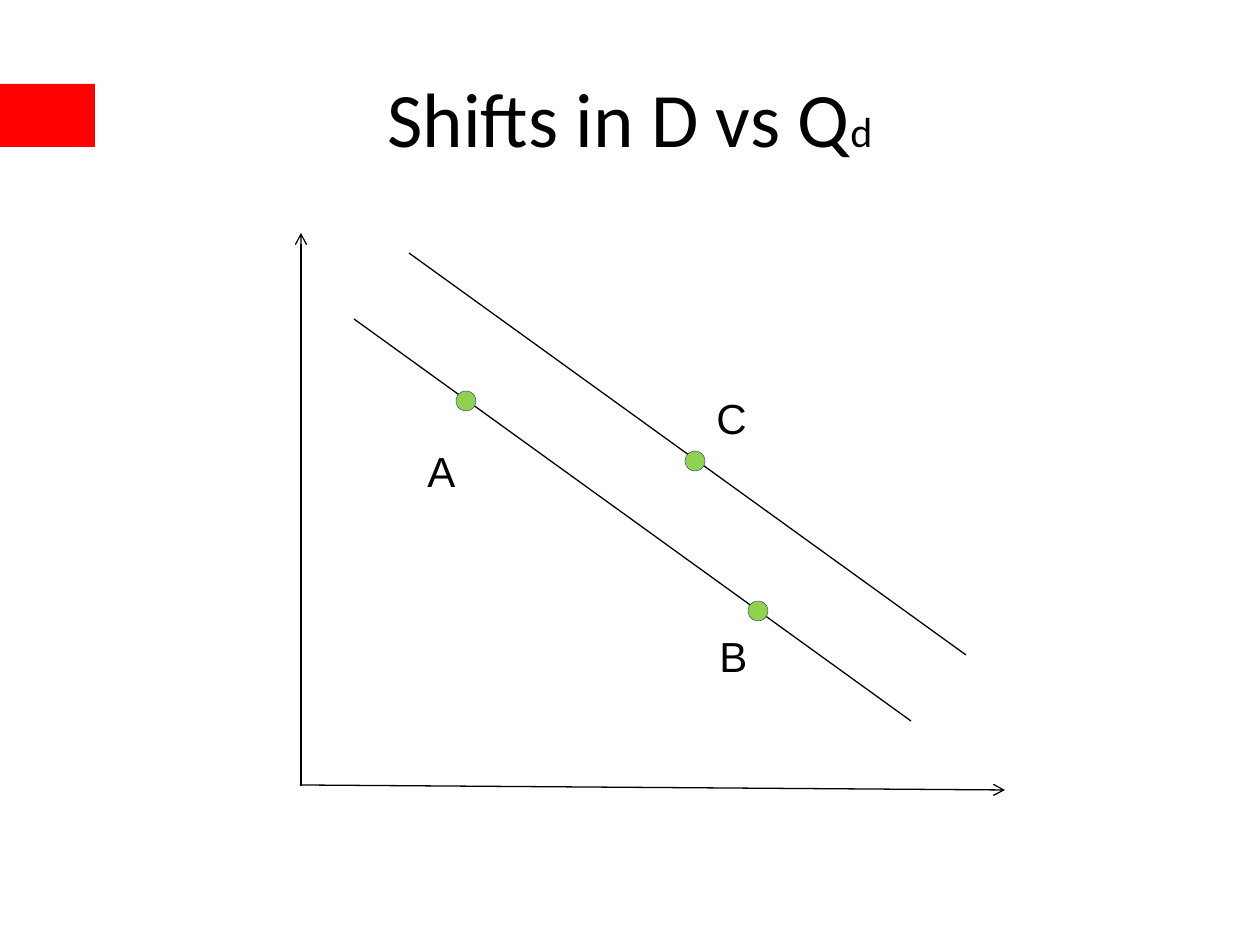
from dataclasses import dataclass

from lxml.etree import SubElement
from pptx import Presentation
from pptx.dml.color import RGBColor as Color
from pptx.enum.shapes import MSO_CONNECTOR as Connector, MSO_SHAPE as Preset
from pptx.enum.text import MSO_ANCHOR as Anchor, MSO_AUTO_SIZE as AutoSize, PP_ALIGN as Align
from pptx.oxml.ns import qn
from pptx.util import Emu, Pt

EMU_PER_PX = 914400 / 126


def px(*lengths):
    return [Emu(round(length * EMU_PER_PX)) for length in lengths]


def assign(target, values):
    for name, value in values.items():
        setattr(target, name, value)


@dataclass(frozen=True)
class Theme:
    black: Color = Color(0, 0, 0)
    accent: Color = Color(255, 0, 0)
    point: Color = Color(0x92, 0xD0, 0x50)
    point_edge: Color = Color(0x1F, 0x49, 0x7D)
    title_font: str = "Calibri"
    label_font: str = "Arial"
    title_size: Pt = Pt(44)
    small_size: Pt = Pt(24)
    line_width: Pt = Pt(0.75)
    edge_width: Pt = Pt(0.25)


class DiagramSlide:
    """Draws the supply and demand diagram in one theme."""

    def __init__(self, slide, theme):
        self.slide = slide
        self.theme = theme
        self.diagram = slide.shapes.add_group_shape().shapes

    def block(self, shapes, preset, box, fill, edge=None):
        shape = shapes.add_shape(preset, *px(*box))
        shape.shadow.inherit = False
        shape.fill.solid()
        shape.fill.fore_color.rgb = fill
        if edge is None:
            shape.line.fill.background()
        else:
            shape.line.color.rgb = edge
            shape.line.width = self.theme.edge_width

    def text(self, shapes, box, runs, font, frame_format, paragraph_format):
        frame = shapes.add_textbox(*px(*box)).text_frame
        assign(frame, {"word_wrap": True, **frame_format})
        paragraph = frame.paragraphs[0]
        assign(paragraph, paragraph_format)
        for words, size in runs:
            run = paragraph.add_run()
            assign(run, {"text": words})
            assign(run.font, {"name": font, "size": size})
            run.font.color.rgb = self.theme.black

    def title(self, box, main, subscript):
        theme = self.theme
        runs = [(main, theme.title_size), (subscript, theme.small_size)]
        self.text(self.slide.shapes, box, runs, theme.title_font,
                  {"vertical_anchor": Anchor.MIDDLE}, {"alignment": Align.CENTER})

    def label(self, box, letter):
        theme = self.theme
        self.text(self.diagram, box, [(letter, theme.small_size)], theme.label_font,
                  {"auto_size": AutoSize.SHAPE_TO_FIT_TEXT}, {"line_spacing": 0.8})

    def line(self, start, end, arrow=False):
        connector = self.diagram.add_connector(Connector.STRAIGHT, *px(*start, *end))
        connector.line.color.rgb = self.theme.black
        connector.line.width = self.theme.line_width
        properties = connector._element.spPr
        if arrow:
            SubElement(properties.find(qn("a:ln")), qn("a:tailEnd"), type="arrow")
        SubElement(properties, qn("a:effectLst"))

    def point(self, left, top, size=20):
        self.block(self.diagram, Preset.OVAL, (left, top, size, size),
                   self.theme.point, self.theme.point_edge)


def main():
    presentation = Presentation()
    presentation.slide_width, presentation.slide_height = px(1260, 945)
    slide = presentation.slides.add_slide(presentation.slide_layouts[6])
    theme = Theme()
    drawing = DiagramSlide(slide, theme)

    drawing.block(slide.shapes, Preset.RECTANGLE, (0, 84, 95, 63), theme.accent)
    drawing.title((63, 38, 1134, 158), "Shifts in D vs Q", "d")

    drawing.line((300, 785), (1005, 790), arrow=True)
    drawing.line((301, 786), (301, 233), arrow=True)
    run, drop = 557, 402
    for left, top in [(354, 319), (409, 253)]:
        drawing.line((left, top), (left + run, top + drop))

    points = {
        "A": ((456, 391), (415, 449, 42, 53)),
        "B": ((748, 601), (707, 634, 42, 53)),
        "C": ((685, 451), (704, 396, 50, 53)),
    }
    for letter, (corner, label_box) in points.items():
        drawing.point(*corner)
        drawing.label(label_box, letter)

    presentation.save("out.pptx")


if __name__ == "__main__":
    main()
